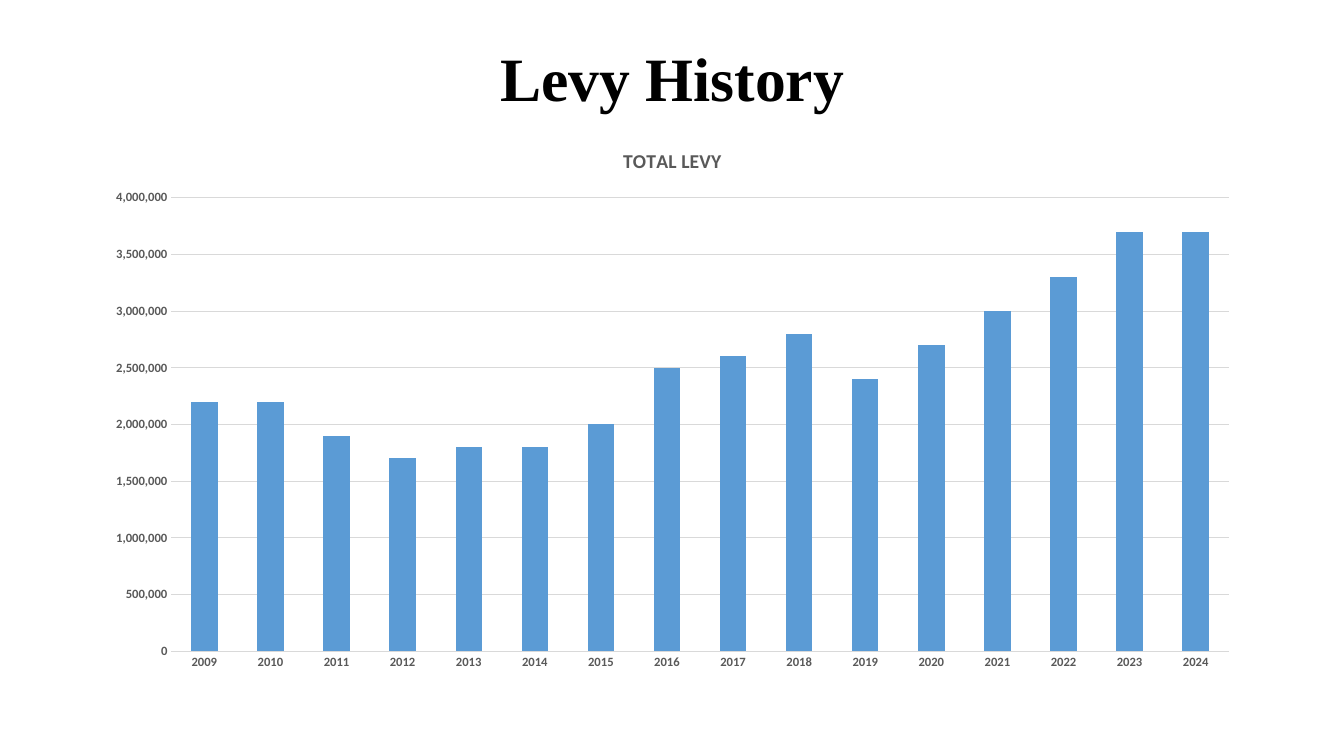
from dataclasses import dataclass
from typing import Any

from pptx import Presentation
from pptx.chart.data import CategoryChartData
from pptx.dml.color import RGBColor
from pptx.enum.chart import XL_CHART_TYPE as ChartType, XL_TICK_MARK as Tick
from pptx.enum.text import MSO_ANCHOR as Anchor, PP_ALIGN as Align
from pptx.util import Pt

PX = 914400 / 100.8  # EMU in one px

BLACK = RGBColor(0x00, 0x00, 0x00)
GRAY = RGBColor(0x59, 0x59, 0x59)
GRID_GRAY = RGBColor(0xD9, 0xD9, 0xD9)
LEVY_BLUE = RGBColor(0x5B, 0x9B, 0xD5)

HEADING_FONT = {"name": "Times New Roman", "size": Pt(44), "bold": True}
CHART_FONT = {"name": "Calibri", "size": Pt(10), "bold": True}
CHART_TITLE_FONT = {**CHART_FONT, "size": Pt(14)}
AXIS_FONT = {**CHART_FONT, "size": Pt(9)}
AXIS_FORMAT = {"major_tick_mark": Tick.NONE, "minor_tick_mark": Tick.NONE}
SCALE_FORMAT = {"minimum_scale": 0, "maximum_scale": 4_000_000, "major_unit": 500_000}

FIRST_YEAR = 2009
LEVIES = [
    2_200_000, 2_200_000, 1_900_000, 1_700_000, 1_800_000, 1_800_000, 2_000_000, 2_500_000,
    2_600_000, 2_800_000, 2_400_000, 2_700_000, 3_000_000, 3_300_000, 3_700_000, 3_700_000,
]


@dataclass(frozen=True)
class Box:
    left: int
    top: int
    width: int
    height: int

    def emu(self) -> tuple[int, int, int, int]:
        return px(self.left), px(self.top), px(self.width), px(self.height)


HEADING_BOX = Box(93, 37, 1159, 90)
CHART_BOX = Box(93, 127, 1159, 554)


def px(length: int) -> int:
    return round(length * PX)


def apply_format(target: Any, values: dict[str, Any]) -> None:
    for attribute, value in values.items():
        setattr(target, attribute, value)


def apply_font(font: Any, values: dict[str, Any], color: RGBColor) -> None:
    apply_format(font, values)
    font.color.rgb = color


def add_heading(slide: Any, text: str) -> None:
    heading = slide.shapes.title
    heading.left, heading.top, heading.width, heading.height = HEADING_BOX.emu()
    heading.text_frame.text = text
    heading.text_frame.vertical_anchor = Anchor.MIDDLE
    line = heading.text_frame.paragraphs[0]
    apply_format(line, {"alignment": Align.CENTER, "line_spacing": 0.9})
    apply_font(line.runs[0].font, HEADING_FONT, BLACK)


def add_levy_chart(slide: Any, name: str) -> None:
    levy_data = CategoryChartData(number_format="#,##0")
    levy_data.categories = [str(FIRST_YEAR + i) for i in range(len(LEVIES))]
    levy_data.add_series(name, LEVIES)
    chart = slide.shapes.add_chart(
        ChartType.COLUMN_CLUSTERED, *CHART_BOX.emu(), levy_data
    ).chart
    chart.has_legend = False
    apply_font(chart.font, CHART_FONT, BLACK)

    # Chart title
    chart.has_title = True
    chart.chart_title.include_in_layout = False
    chart.chart_title.text_frame.text = name
    caption = chart.chart_title.text_frame.paragraphs[0].runs[0]
    apply_font(caption.font, CHART_TITLE_FONT, GRAY)

    # Columns
    plot = chart.plots[0]
    apply_format(plot, {"gap_width": 150, "vary_by_categories": False})
    columns = plot.series[0].format
    columns.fill.solid()
    columns.fill.fore_color.rgb = LEVY_BLUE
    columns.line.fill.background()

    # Axes and gridlines
    for axis in (chart.category_axis, chart.value_axis):
        apply_format(axis, AXIS_FORMAT)
        apply_font(axis.tick_labels.font, AXIS_FONT, GRAY)
        axis.format.line.fill.background()
    amounts = chart.value_axis
    apply_format(amounts, SCALE_FORMAT)
    apply_format(amounts.tick_labels, {"number_format": "#,##0", "number_format_is_linked": False})
    amounts.has_major_gridlines = True
    gridlines = amounts.major_gridlines.format.line
    gridlines.color.rgb = GRID_GRAY
    gridlines.width = Pt(0.75)


def main() -> None:
    deck = Presentation()
    deck.slide_width, deck.slide_height = px(1344), px(756)
    slide = deck.slides.add_slide(deck.slide_layouts.get_by_name("Title Only"))
    add_heading(slide, "Levy History")
    add_levy_chart(slide, "TOTAL LEVY")
    deck.save("out.pptx")


if __name__ == "__main__":
    main()
